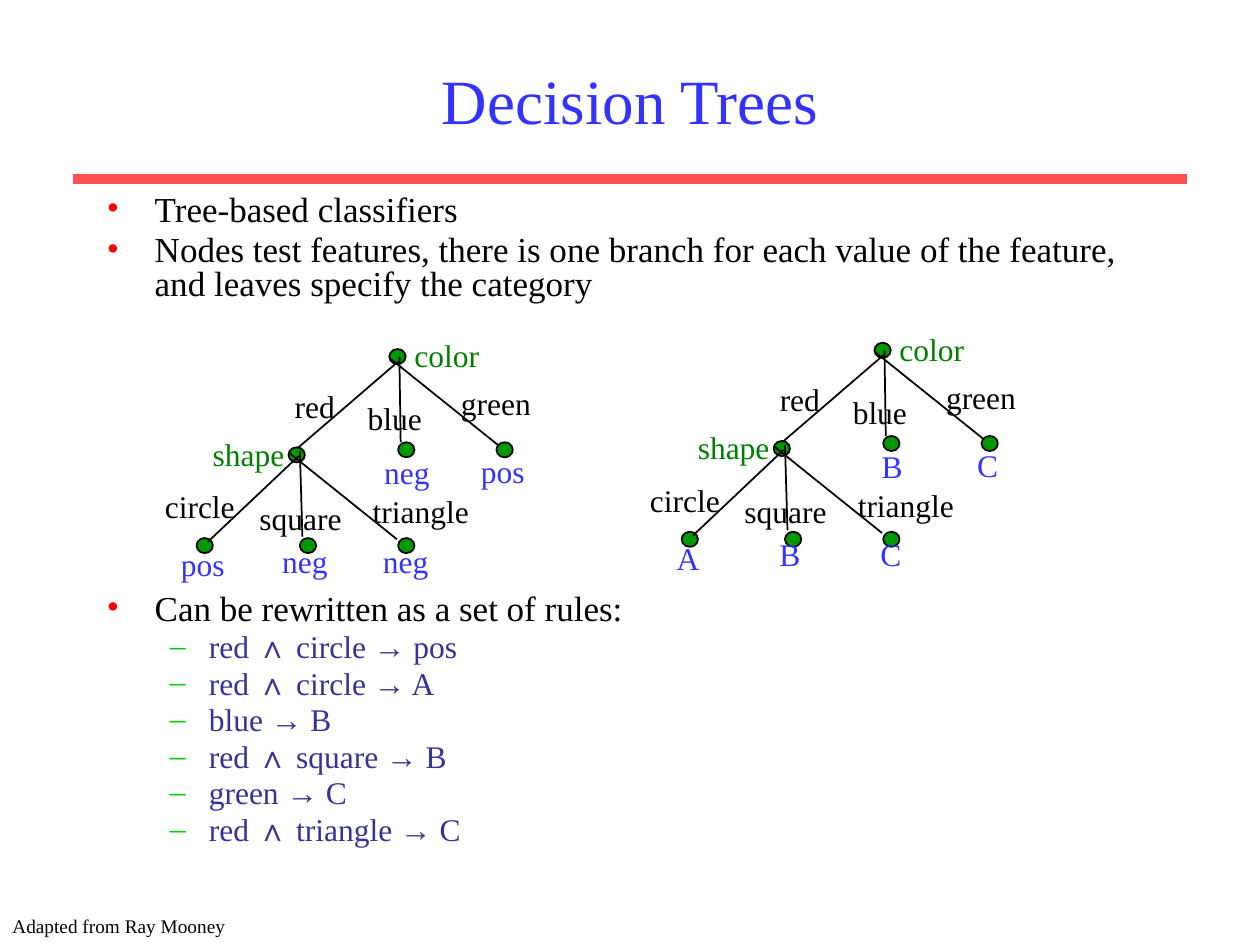
import pptx
import pptx.util
import pptx.dml.color
import pptx.enum.shapes
import pptx.enum.text
import pptx.oxml
import pptx.oxml.ns
from lxml import etree

Inches = pptx.util.Inches
Pt = pptx.util.Pt
ALIGN = pptx.enum.text.PP_ALIGN
ANCHOR = pptx.enum.text.MSO_ANCHOR
FONT = "Times New Roman"
COLORS = {
    "title": "3333FF", "rule": "FF5050", "text": "000000", "logic": "333399",
    "bullet": "FF0000", "dash": "00CC00", "node": "009900",
    "feature": "008000", "leaf": "3333FF",
}

NODES = [(1.08, 0.93), (1.95, 0.89), (2.73, 0.89), (1.88, 0.15),
         (0.35, 1.65), (1.17, 1.65), (1.95, 1.65)]
BRANCHES = [((1.95, 0.25), (1.16, 0.93)), ((1.96, 0.21), (1.97, 0.89)),
            ((1.88, 0.22), (2.74, 0.91)), ((1.16, 1.0), (0.44, 1.68)),
            ((1.17, 0.96), (1.19, 1.64)), ((1.08, 0.97), (1.94, 1.66))]
FEATURES = [("color", 1.98, 0, 0.71), ("shape", 0.38, 0.78, 0.77)]
VALUES = [("red", 1.03, 0.4, 0.52), ("blue", 1.61, 0.5, 0.63),
          ("green", 2.35, 0.38, 0.75), ("circle", 0, 1.2, 0.75),
          ("square", 0.75, 1.29, 0.85), ("triangle", 1.65, 1.24, 0.96)]
LEAF_CENTERS = [(2.02, 0.93), (2.78, 0.92), (0.4, 1.66), (1.21, 1.63), (2.01, 1.63)]
LEAF_WIDTH = 0.56

POINTS = [
    (0, "Tree-based classifiers"),
    (0, "Nodes test features, there is one branch for each value of the feature, "
        "and leaves specify the category"),
    (0, "Can be rewritten as a set of rules:"),
    (1, "red ∧ circle → pos"),
    (1, "red ∧ circle → A"),
    (1, "blue → B"),
    (1, "red ∧ square → B"),
    (1, "green → C"),
    (1, "red ∧ triangle → C"),
]
LEVELS = [
    {"indent": (0.38, -0.38), "mark": "•", "mark_color": "bullet",
     "size": 20, "color": "text", "before": 4},
    {"indent": (0.81, -0.31), "mark": "–", "mark_color": "dash",
     "size": 18, "color": "logic", "before": 3.6},
]
TREE_GAP = 166.5


def rgb(name):
    return pptx.dml.color.RGBColor.from_string(COLORS[name])


def add_run(paragraph, text, size, color):
    run = paragraph.add_run()
    run.text = text
    run.font.size = Pt(size)
    run.font.name = FONT
    run.font.color.rgb = rgb(color)


def add_line(shapes, start, end, color, width):
    line = shapes.add_connector(pptx.enum.shapes.MSO_CONNECTOR.STRAIGHT,
                                *map(Inches, start + end))
    line.line.color.rgb = rgb(color)
    line.line.width = Pt(width)
    etree.SubElement(line._element.spPr, pptx.oxml.ns.qn("a:effectLst"))


def add_label(shapes, text, box, size, color, align=ALIGN.LEFT):
    frame = shapes.add_textbox(*map(Inches, box)).text_frame
    frame.word_wrap = False
    if align == ALIGN.LEFT:
        frame.margin_right = 0
    paragraph = frame.paragraphs[0]
    paragraph.alignment = align
    add_run(paragraph, text, size, color)


def add_bullet(paragraph, level):
    properties = paragraph._p.get_or_add_pPr()
    margin, indent = level["indent"]
    properties.set("marL", str(Inches(margin)))
    properties.set("indent", str(Inches(indent)))
    mark_color = etree.SubElement(properties, pptx.oxml.ns.qn("a:buClr"))
    etree.SubElement(mark_color, pptx.oxml.ns.qn("a:srgbClr"),
                     val=COLORS[level["mark_color"]])
    etree.SubElement(properties, pptx.oxml.ns.qn("a:buFont"), typeface=FONT)
    etree.SubElement(properties, pptx.oxml.ns.qn("a:buChar"), char=level["mark"])


def build_heading(slide, box):
    heading = slide.shapes.title
    heading.left, heading.top, heading.width, heading.height = map(Inches, box)
    heading.text_frame.vertical_anchor = ANCHOR.MIDDLE
    paragraph = heading.text_frame.paragraphs[0]
    paragraph.alignment = ALIGN.CENTER
    add_run(paragraph, "Decision Trees", 36, "title")
    add_line(slide.shapes, (0.58, 1.42), (9.42, 1.42), "rule", 6)


def build_points(slide, box):
    frame = slide.shapes.add_textbox(*map(Inches, box)).text_frame
    frame.word_wrap = True
    for index, (depth, text) in enumerate(POINTS):
        level = LEVELS[depth]
        paragraph = frame.add_paragraph() if index else frame.paragraphs[0]
        paragraph.level = depth
        add_bullet(paragraph, level)
        paragraph.line_spacing = 0.8
        if index:
            follows_trees = text.startswith("Can be")
            paragraph.space_before = Pt(TREE_GAP if follows_trees else level["before"])
        add_run(paragraph, text, level["size"], level["color"])


def build_tree(slide, left, top, categories):
    shapes = slide.shapes.add_group_shape().shapes

    def place(point):
        return left + point[0], top + point[1]

    for corner in NODES:
        node = shapes.add_shape(pptx.enum.shapes.MSO_SHAPE.OVAL,
                                *map(Inches, place(corner) + (0.13, 0.12)))
        node.shadow.inherit = False
        node.fill.solid()
        node.fill.fore_color.rgb = rgb("node")
        node.line.color.rgb = rgb("text")
        node.line.width = Pt(1)
    for start, end in BRANCHES:
        add_line(shapes, place(start), place(end), "text", 1)
    for labels, color in ((FEATURES, "feature"), (VALUES, "text")):
        for text, x, y, width in labels:
            add_label(shapes, text, place((x, y)) + (width, 0.4), 18, color)
    for category, (center, y) in zip(categories, LEAF_CENTERS):
        corner = place((center - LEAF_WIDTH / 2, y))
        add_label(shapes, category, corner + (LEAF_WIDTH, 0.4), 18, "leaf", ALIGN.CENTER)


def main():
    deck = pptx.Presentation()
    deck.slide_width, deck.slide_height = Inches(10), Inches(7.5)
    slide = deck.slides.add_slide(deck.slide_layouts[5])
    build_heading(slide, (0.75, 0.25, 8.5, 1.08))
    build_points(slide, (0.75, 1.5, 8.5, 5.48))
    build_tree(slide, 1.21, 2.62, ["neg", "pos", "pos", "neg", "neg"])
    build_tree(slide, 5.06, 2.57, ["B", "C", "A", "B", "C"])
    add_label(slide.shapes, "Adapted from Ray Mooney", (0, 7.21, 1.84, 0.29), 11, "text")
    deck.save("out.pptx")


if __name__ == "__main__":
    main()
